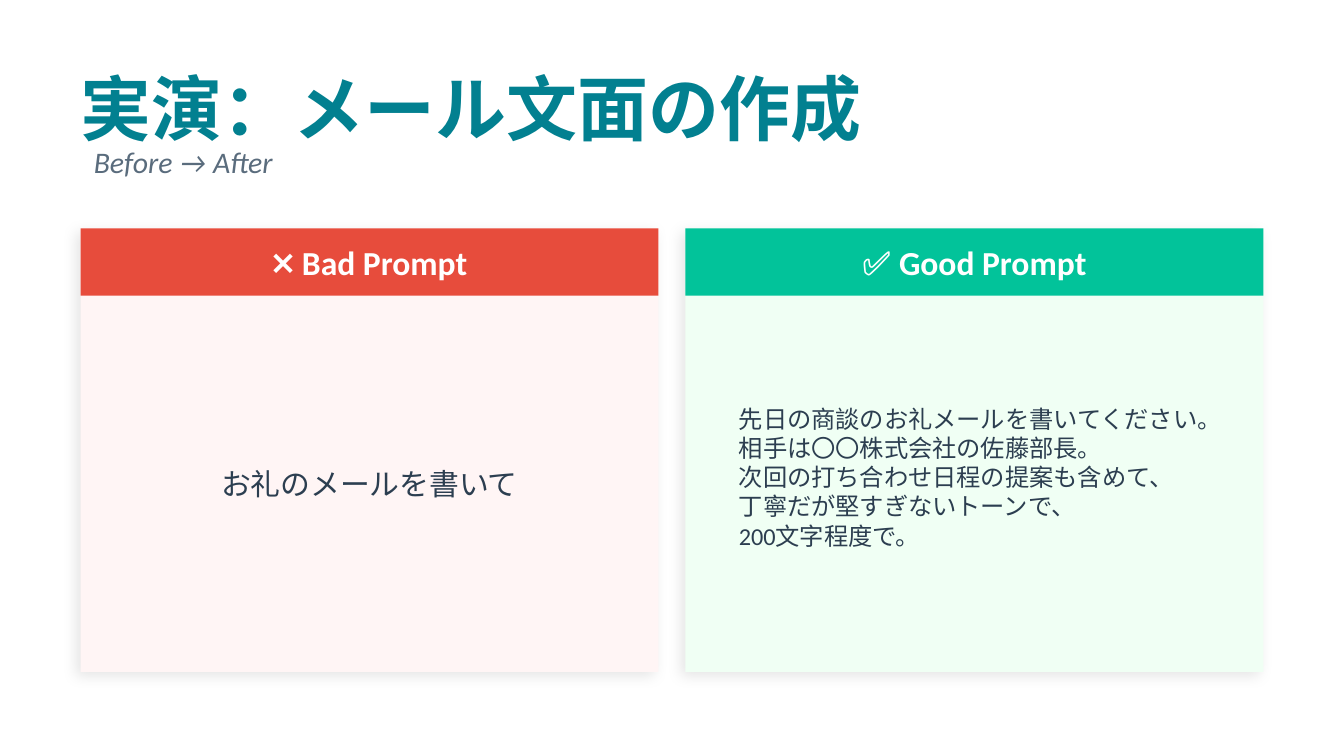
from dataclasses import dataclass

from lxml import etree
from pptx import Presentation
from pptx import util as u
from pptx.dml.color import RGBColor
from pptx.enum import shapes, text
from pptx.oxml import ns

PX = u.Inches(1) // 200  # 200 px to the inch
PAGE_WIDTH, PAGE_HEIGHT = 2000, 1125
FONT = "Calibri"
COLORS = {
    "title": "028090",
    "subtitle": "5A6C7D",
    "body": "2C3E50",
    "white": "FFFFFF",
    "bad": "E74C3C",
    "bad_tint": "FFF5F5",
    "good": "02C39A",
    "good_tint": "F0FFF4",
    "shadow": "000000",
}
LEFT, CARD_TOP = 120, 340
CONTENT_WIDTH = PAGE_WIDTH - 2 * LEFT
CARD_WIDTH, CARD_HEIGHT, HEADER_HEIGHT = 860, 660, 100
CARD_GAP, CARD_PADDING = 40, 60


@dataclass(frozen=True)
class Area:
    left: int
    top: int
    width: int
    height: int

    def emu(self) -> list[int]:
        return [side * PX for side in (self.left, self.top, self.width, self.height)]


@dataclass(frozen=True)
class Style:
    size: int
    color: str
    bold: bool = False
    italic: bool = False
    centered: bool = False


@dataclass(frozen=True)
class Card:
    header: str
    prompt: str
    color: str
    tint: str
    prompt_top: int
    prompt_height: int
    prompt_style: Style


HEADER_STYLE = Style(18, "white", bold=True, centered=True)
CARDS = [
    Card("❌ Bad Prompt", "お礼のメールを書いて", "bad", "bad_tint", 500, 440,
         Style(16, "body", centered=True)),
    Card("✅ Good Prompt",
         "先日の商談のお礼メールを書いてください。\n"
         "相手は〇〇株式会社の佐藤部長。\n"
         "次回の打ち合わせ日程の提案も含めて、\n"
         "丁寧だが堅すぎないトーンで、\n"
         "200文字程度で。",
         "good", "good_tint", 480, 460, Style(13, "body")),
]


def add_text(page, area: Area, words: str, style: Style, inset: bool = True) -> None:
    box = page.shapes.add_textbox(*area.emu())
    frame = box.text_frame
    frame.word_wrap = True
    frame.vertical_anchor = text.MSO_ANCHOR.MIDDLE
    if not inset:
        frame.margin_left = frame.margin_right = 0
        frame.margin_top = frame.margin_bottom = 0
    frame.text = words
    for para in frame.paragraphs:
        para.alignment = text.PP_ALIGN.CENTER if style.centered else text.PP_ALIGN.LEFT
        for span in para.runs:
            span.font.name = FONT
            span.font.size = u.Pt(style.size)
            span.font.bold = style.bold
            span.font.italic = style.italic
            span.font.color.rgb = RGBColor.from_string(COLORS[style.color])


def add_panel(page, area: Area, color: str):
    panel = page.shapes.add_shape(shapes.MSO_SHAPE.RECTANGLE, *area.emu())
    panel.shadow.inherit = False
    panel.fill.solid()
    panel.fill.fore_color.rgb = RGBColor.from_string(COLORS[color])
    panel.line.fill.background()
    return panel


def add_soft_shadow(panel) -> None:
    """Cast a faint shadow towards the lower left."""
    effects = panel.element.spPr.find(ns.qn("a:effectLst"))
    shadow = etree.SubElement(
        effects, ns.qn("a:outerShdw"), blurRad=str(u.Pt(8)), dist=str(u.Pt(3)),
        dir=str(135 * 60000), algn="bl", rotWithShape="0")
    color = etree.SubElement(shadow, ns.qn("a:srgbClr"), val=COLORS["shadow"])
    etree.SubElement(color, ns.qn("a:alpha"), val="10000")


def add_card(page, card: Card, left: int) -> None:
    add_soft_shadow(add_panel(page, Area(left, CARD_TOP, CARD_WIDTH, CARD_HEIGHT), card.tint))
    header = Area(left, CARD_TOP, CARD_WIDTH, HEADER_HEIGHT)
    add_panel(page, header, card.color)
    add_text(page, header, card.header, HEADER_STYLE)
    prompt = Area(left + CARD_PADDING, card.prompt_top,
                  CARD_WIDTH - 2 * CARD_PADDING, card.prompt_height)
    add_text(page, prompt, card.prompt, card.prompt_style)


def main() -> None:
    deck = Presentation()
    deck.slide_width, deck.slide_height = PAGE_WIDTH * PX, PAGE_HEIGHT * PX
    page = deck.slides.add_slide(deck.slide_layouts[6])
    add_text(page, Area(LEFT, 100, CONTENT_WIDTH, 120), "実演：メール文面の作成",
             Style(38, "title", bold=True), inset=False)
    add_text(page, Area(LEFT, 200, CONTENT_WIDTH, 80), "Before → After",
             Style(16, "subtitle", italic=True))
    for column, card in enumerate(CARDS):
        add_card(page, card, LEFT + column * (CARD_WIDTH + CARD_GAP))
    deck.save("out.pptx")


if __name__ == "__main__":
    main()
